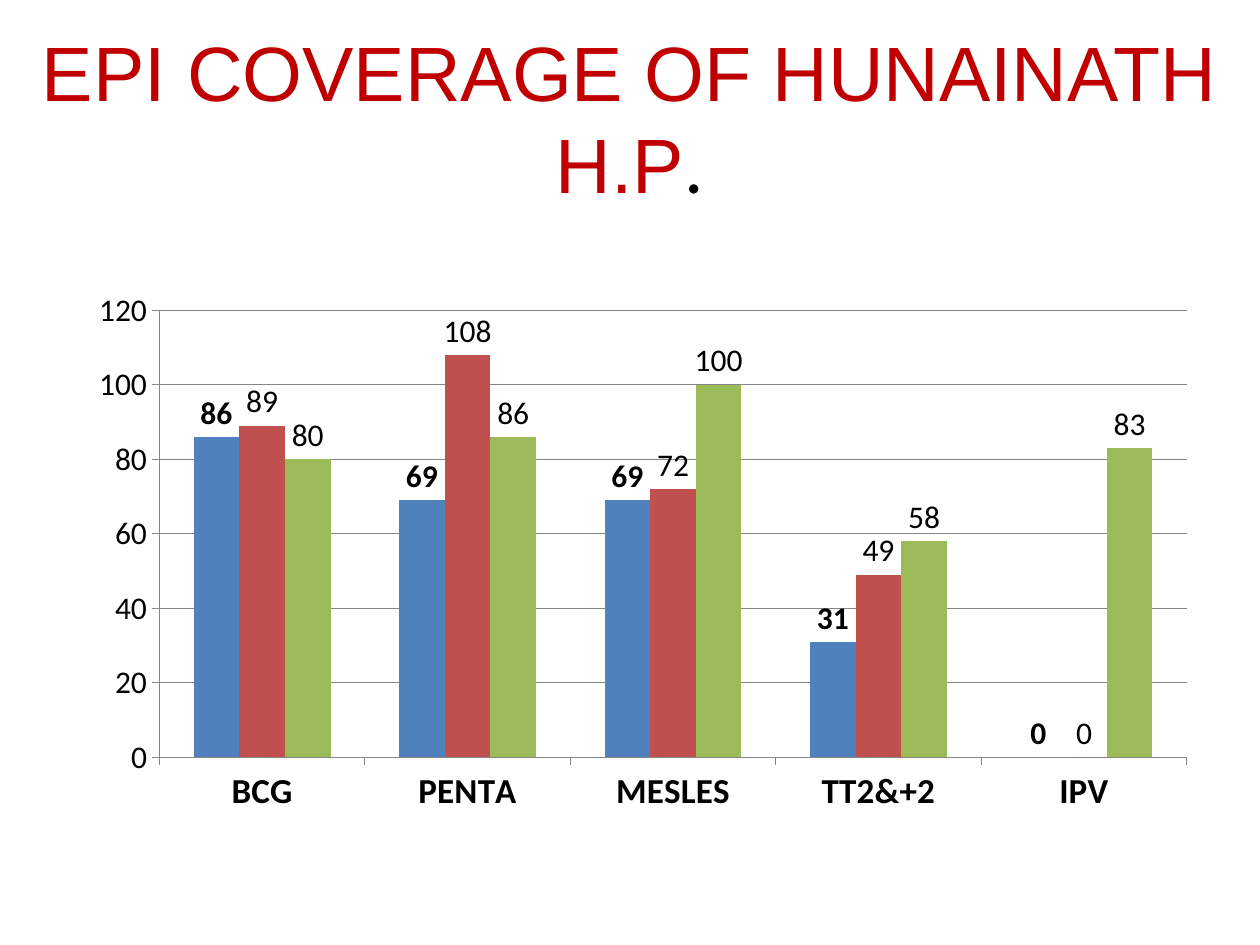
"""Build the EPI coverage slide with its clustered column chart."""
from lxml.etree import SubElement
from pptx import Presentation
from pptx.chart.data import CategoryChartData
from pptx.dml.color import RGBColor
from pptx.enum.chart import XL_CHART_TYPE, XL_LABEL_POSITION, XL_TICK_MARK
from pptx.enum.text import MSO_ANCHOR, PP_ALIGN
from pptx.oxml.ns import qn
from pptx.util import Inches, Pt

TITLE = [
    ("EPI COVERAGE OF HUNAINATH H.P", "Arial", "C00000"),
    (".", "Calibri", "000000"),
]
VACCINES = ["BCG", "PENTA", "MESLES", "TT2&+2", "IPV"]
COVERAGE = [
    ("Series 1", [86, 69, 69, 31, 0], "4F81BD", True),
    ("Series 2", [89, 108, 72, 49, 0], "C0504D", False),
    ("Series 3", [80, 86, 100, 58, 83], "9BBB59", False),
]
TITLE_BOX = (0, 0.3, 10, 1.25)
CHART_BOX = (0.5, 1.75, 9, 4.95)
PLOT_LAYOUT = {
    "layoutTarget": "inner", "xMode": "edge", "yMode": "edge",
    "x": 0.085, "y": 0.144, "w": 0.906, "h": 0.717,
}
GRID_COLOR = "868686"


def color(value):
    return RGBColor.from_string(value)


def inches(box):
    return [Inches(length) for length in box]


def apply(target, formats):
    for name, value in formats.items():
        setattr(target, name, value)


def set_font(font, size, value="000000", **formats):
    apply(font, {"name": "Calibri", "size": Pt(size), **formats})
    font.color.rgb = color(value)


def add_title(slide):
    frame = slide.shapes.add_textbox(*inches(TITLE_BOX)).text_frame
    apply(frame, {"word_wrap": True, "vertical_anchor": MSO_ANCHOR.MIDDLE})
    heading = frame.paragraphs[0]
    heading.alignment = PP_ALIGN.CENTER
    for words, typeface, shade in TITLE:
        run = heading.add_run()
        run.text = words
        set_font(run.font, 44, shade, name=typeface)


def place_plot(chart):
    plot_area = chart._chartSpace.find(".//" + qn("c:plotArea"))
    for old_layout in plot_area.findall(qn("c:layout")):
        plot_area.remove(old_layout)
    layout = SubElement(plot_area, qn("c:layout"))
    plot_area.insert(0, layout)
    manual = SubElement(layout, qn("c:manualLayout"))
    for name, value in PLOT_LAYOUT.items():
        SubElement(manual, qn(f"c:{name}")).set("val", str(value))


def add_coverage(slide):
    figures = CategoryChartData()
    figures.categories = VACCINES
    for name, values, _, _ in COVERAGE:
        figures.add_series(name, values)
    chart = slide.shapes.add_chart(
        XL_CHART_TYPE.COLUMN_CLUSTERED, *inches(CHART_BOX), figures).chart
    apply(chart, {"has_legend": False, "has_title": False})
    set_font(chart.font, 18)
    place_plot(chart)

    apply(chart.plots[0], {"gap_width": 150, "overlap": 0, "vary_by_categories": False})
    for series, (_, _, shade, bold) in zip(chart.plots[0].series, COVERAGE):
        series.format.fill.solid()
        series.format.fill.fore_color.rgb = color(shade)
        labels = series.data_labels
        apply(labels, {"show_value": True, "position": XL_LABEL_POSITION.OUTSIDE_END})
        set_font(labels.font, 18, bold=bold)

    scale = chart.value_axis
    apply(scale, {"minimum_scale": 0, "maximum_scale": 120, "major_unit": 20,
                  "has_major_gridlines": True})
    for axis, size, bold in ((chart.category_axis, 20, True), (scale, 18, False)):
        axis.major_tick_mark = XL_TICK_MARK.OUTSIDE
        set_font(axis.tick_labels.font, size, bold=bold)
    for rule in (chart.category_axis, scale, scale.major_gridlines):
        rule.format.line.color.rgb = color(GRID_COLOR)
        rule.format.line.width = Pt(0.75)


def main():
    deck = Presentation()
    apply(deck, {"slide_width": Inches(10), "slide_height": Inches(7.5)})
    slide = deck.slides.add_slide(deck.slide_layouts[6])
    add_title(slide)
    add_coverage(slide)
    deck.save("out.pptx")


if __name__ == "__main__":
    main()
